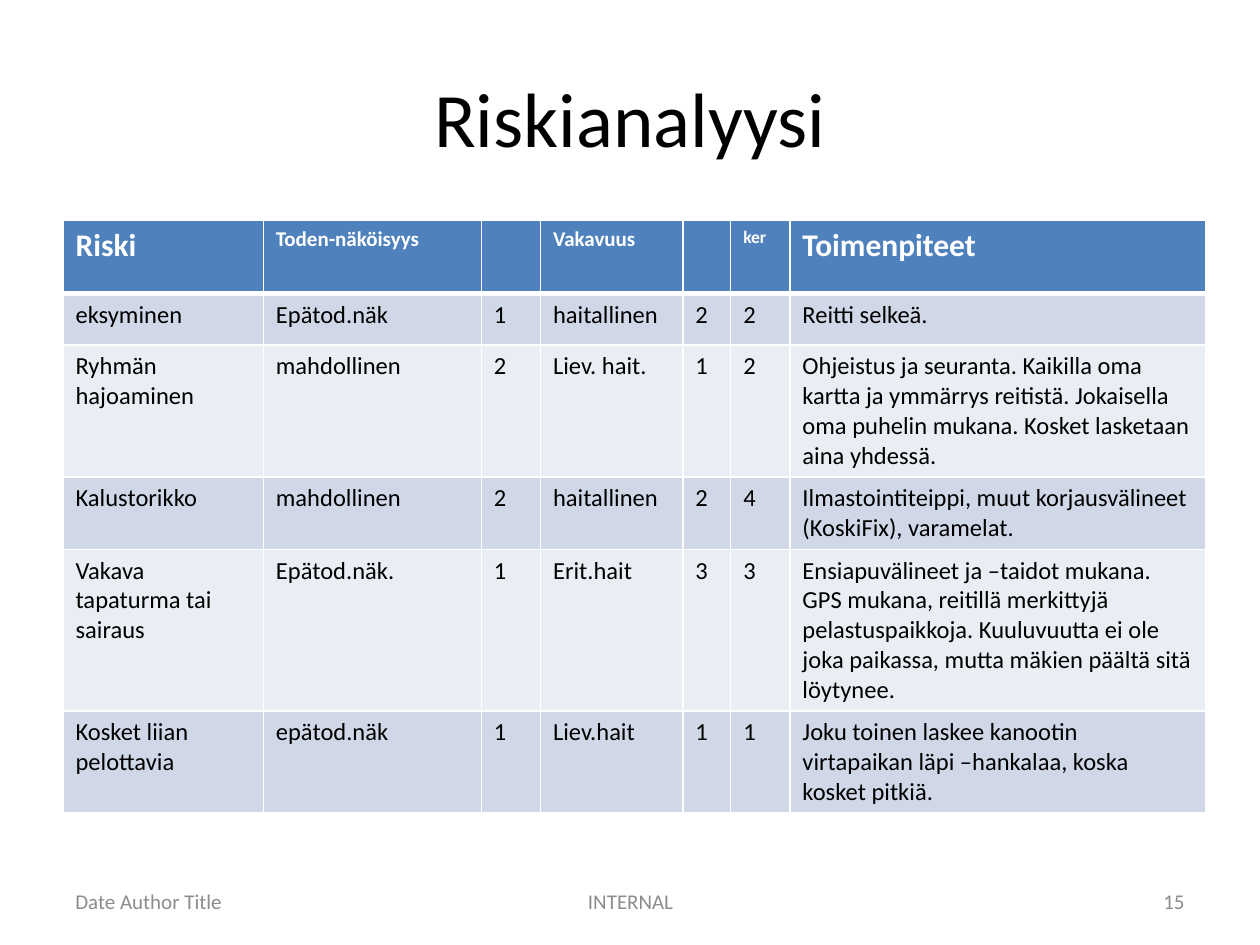
from dataclasses import dataclass
from typing import NamedTuple

from lxml.etree import SubElement
from pptx import Presentation
from pptx.dml.color import RGBColor
from pptx.enum.text import MSO_ANCHOR, PP_ALIGN
from pptx.oxml.ns import qn
from pptx.util import Inches, Pt

SLIDE_WIDTH, SLIDE_HEIGHT = Inches(10), Inches(7.5)
GRID_COLUMNS, GRID_ROWS = 100, 75


@dataclass(frozen=True)
class Theme:
    font: str = "Calibri"
    ink: str = "000000"
    muted: str = "8C8C8C"
    white: str = "FFFFFF"
    header: str = "4F81BD"
    bands: tuple[str, str] = ("D0D8E8", "E9EDF4")
    title_size: float = 44
    body_size: float = 14
    footer_size: float = 12
    thin_line: float = 1
    thick_line: float = 3


class Area(NamedTuple):
    """A rectangle in grid columns and rows."""
    left: float
    top: float
    width: float
    height: float


class Column(NamedTuple):
    heading: str
    heading_size: float
    width: float


class Footer(NamedTuple):
    text: str
    area: Area
    align: PP_ALIGN


THEME = Theme()
TITLE_AREA = Area(5, 3, 90, 12.5)
TABLE_AREA = Area(5, 17.5, 90.6, 46.5)
HEADER_HEIGHT, RISK_HEIGHT = 5.8, 4.1

COLUMNS = [
    Column("Riski", 18, 15.9),
    Column("Toden-näköisyys", 12, 17.3),
    Column("", 12, 4.7),
    Column("Vakavuus", 12, 11.3),
    Column("", 12, 3.8),
    Column("ker", 10, 4.7),
    Column("Toimenpiteet", 18, 33),
]

RISKS = [
    ("eksyminen", "Epätod.näk", "1", "haitallinen", "2", "2", "Reitti selkeä."),
    ("Ryhmän hajoaminen", "mahdollinen", "2", "Liev. hait.", "1", "2",
     "Ohjeistus ja seuranta. Kaikilla oma kartta ja ymmärrys reitistä. "
     "Jokaisella oma puhelin mukana. Kosket lasketaan aina yhdessä."),
    ("Kalustorikko", "mahdollinen", "2", "haitallinen", "2", "4",
     "Ilmastointiteippi, muut korjausvälineet (KoskiFix), varamelat."),
    ("Vakava tapaturma tai sairaus", "Epätod.näk.", "1", "Erit.hait", "3", "3",
     "Ensiapuvälineet ja –taidot mukana. GPS mukana, reitillä merkittyjä "
     "pelastuspaikkoja. Kuuluvuutta ei ole joka paikassa, mutta mäkien "
     "päältä sitä löytynee."),
    ("Kosket liian pelottavia", "epätod.näk", "1", "Liev.hait", "1", "1",
     "Joku toinen laskee kanootin virtapaikan läpi –hankalaa, koska kosket pitkiä."),
]

FOOTERS = [
    Footer("Date Author Title", Area(5, 69.5, 23.3, 4), PP_ALIGN.LEFT),
    Footer("INTERNAL", Area(34.2, 69.5, 31.7, 4), PP_ALIGN.CENTER),
    Footer("15", Area(71.7, 69.5, 23.3, 4), PP_ALIGN.RIGHT),
]


def across(columns: float) -> int:
    return round(SLIDE_WIDTH * columns / GRID_COLUMNS)


def down(rows: float) -> int:
    return round(SLIDE_HEIGHT * rows / GRID_ROWS)


def place(area: Area) -> tuple[int, int, int, int]:
    return across(area.left), down(area.top), across(area.width), down(area.height)


def write(frame, text: str, size: float, color: str, bold: bool = False,
          align: PP_ALIGN = PP_ALIGN.LEFT) -> None:
    frame.text = text
    for para in frame.paragraphs:
        para.alignment = align
        for span in para.runs:
            span.font.name = THEME.font
            span.font.size = Pt(size)
            span.font.bold = bold
            span.font.color.rgb = RGBColor.from_string(color)


def set_borders(cell, top: float, bottom: float) -> None:
    """Draw white borders; they must precede the fill in the cell's XML."""
    properties = cell._tc.get_or_add_tcPr()
    widths = {"L": THEME.thin_line, "R": THEME.thin_line, "T": top, "B": bottom}
    for side, width in widths.items():
        line = SubElement(properties, qn(f"a:ln{side}"), w=str(Pt(width)))
        fill = SubElement(line, qn("a:solidFill"))
        SubElement(fill, qn("a:srgbClr"), val=THEME.white)


def add_title(page, text: str) -> None:
    title = page.shapes.title
    title.left, title.top, title.width, title.height = place(TITLE_AREA)
    title.text_frame.vertical_anchor = MSO_ANCHOR.MIDDLE
    write(title.text_frame, text, THEME.title_size, THEME.ink, align=PP_ALIGN.CENTER)


def add_risk_table(page) -> None:
    lines = [tuple(column.heading for column in COLUMNS), *RISKS]
    table = page.shapes.add_table(len(lines), len(COLUMNS), *place(TABLE_AREA)).table
    for table_column, column in zip(table.columns, COLUMNS):
        table_column.width = across(column.width)
    for row_index, (row, texts) in enumerate(zip(table.rows, lines)):
        is_header = row_index == 0
        row.height = down(HEADER_HEIGHT if is_header else RISK_HEIGHT)
        fill = THEME.header if is_header else THEME.bands[(row_index - 1) % 2]
        top = THEME.thick_line if row_index == 1 else THEME.thin_line
        bottom = THEME.thick_line if is_header else THEME.thin_line
        for cell, text, column in zip(row.cells, texts, COLUMNS):
            size = column.heading_size if is_header else THEME.body_size
            color = THEME.white if is_header else THEME.ink
            write(cell.text_frame, text, size, color, bold=is_header)
            set_borders(cell, top, bottom)
            cell.fill.solid()
            cell.fill.fore_color.rgb = RGBColor.from_string(fill)


def add_footer(page, footer: Footer) -> None:
    box = page.shapes.add_textbox(*place(footer.area))
    box.text_frame.word_wrap = True
    box.text_frame.vertical_anchor = MSO_ANCHOR.MIDDLE
    write(box.text_frame, footer.text, THEME.footer_size, THEME.muted, align=footer.align)


def main() -> None:
    deck = Presentation()
    deck.slide_width, deck.slide_height = SLIDE_WIDTH, SLIDE_HEIGHT
    page = deck.slides.add_slide(deck.slide_layouts.get_by_name("Title Only"))
    add_title(page, "Riskianalyysi")
    add_risk_table(page)
    for footer in FOOTERS:
        add_footer(page, footer)
    deck.save("out.pptx")


if __name__ == "__main__":
    main()
